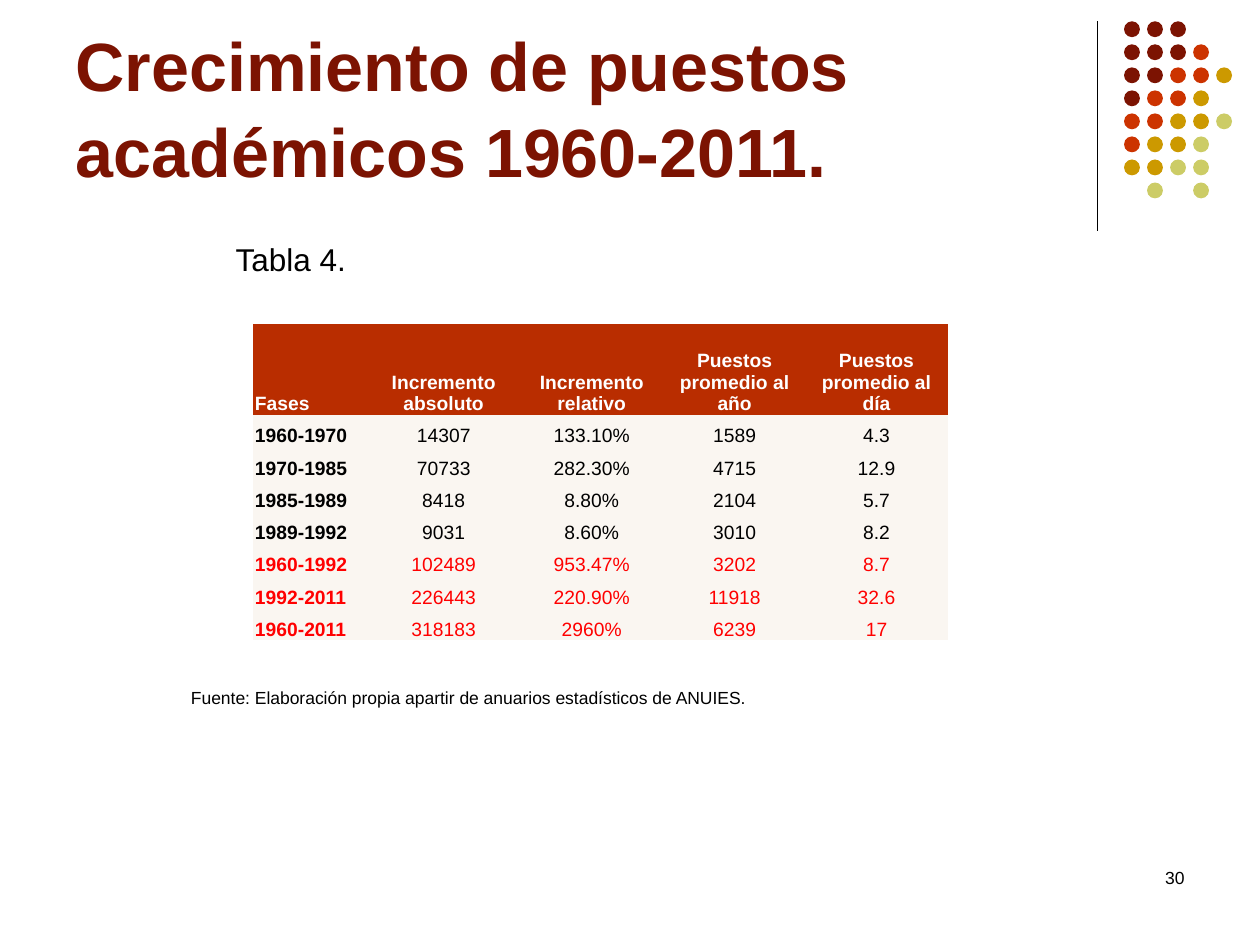
from dataclasses import dataclass
from lxml import etree
from pptx import Presentation
from pptx.dml.color import RGBColor
from pptx.enum.shapes import MSO_CONNECTOR, MSO_SHAPE
from pptx.enum.text import MSO_ANCHOR, MSO_AUTO_SIZE, PP_ALIGN
from pptx.oxml.ns import qn
from pptx.util import Cm, Pt

LEFT, CENTER, RIGHT = PP_ALIGN.LEFT, PP_ALIGN.CENTER, PP_ALIGN.RIGHT
TOP, BOTTOM = MSO_ANCHOR.TOP, MSO_ANCHOR.BOTTOM
OVAL, STRAIGHT = MSO_SHAPE.OVAL, MSO_CONNECTOR.STRAIGHT
NO_AUTOFIT = MSO_AUTO_SIZE.NONE
PLAIN_TABLE = "{2D5ABB26-0587-4C30-8999-92F81FD0307C}"


@dataclass(frozen=True)
class Theme:
    font: str = "Arial"
    maroon: str = "7C1302"
    red: str = "CC3300"
    gold: str = "CC9900"
    olive: str = "CCCC66"
    header: str = "B92D00"
    body: str = "FAF6F1"
    highlight: str = "FF0000"
    black: str = "000000"
    white: str = "FFFFFF"
    title_size: int = 39
    caption_size: int = 18
    table_size: int = 11
    small_size: int = 10


THEME = Theme()

TITLE = "Crecimiento de puestos académicos 1960-2011."
HEADERS = ["Fases", "Incremento absoluto", "Incremento relativo",
           "Puestos promedio al año", "Puestos promedio al día"]
PHASES = [
    ("1960-1970", "14307", "133.10%", "1589", "4.3"),
    ("1970-1985", "70733", "282.30%", "4715", "12.9"),
    ("1985-1989", "8418", "8.80%", "2104", "5.7"),
    ("1989-1992", "9031", "8.60%", "3010", "8.2"),
]
TOTALS = [
    ("1960-1992", "102489", "953.47%", "3202", "8.7"),
    ("1992-2011", "226443", "220.90%", "11918", "32.6"),
    ("1960-2011", "318183", "2960%", "6239", "17"),
]
LABELS = [
    ("Tabla 4.", (4.5, 4.72, 12.19, 1.02), THEME.caption_size, LEFT),
    ("Fuente: Elaboración propia apartir de anuarios estadísticos de ANUIES.",
     (3.6, 13.72, 14, 0.69), THEME.small_size, LEFT),
    ("30", (18.21, 17.35, 5.92, 1.27), THEME.small_size, RIGHT),
]
DOTS = ["MMM", "MMMR", "MMRRG", "MRRG", "RRGGO", "RGGO", "GGOO", " O O"]
DOT_COLORS = {"M": THEME.maroon, "R": THEME.red, "G": THEME.gold, "O": THEME.olive}

COLUMN_WIDTHS = [2.31, 3.05, 2.92, 2.84, 2.88]
HEADER_HEIGHT, ROW_HEIGHT = 1.83, 0.65
TABLE_LEFT, TABLE_TOP = 5.11, 6.53
CELL_INSET = 0.03
DOT_LEFT, DOT_TOP, DOT_SIZE = 22.66, 0.43, 0.32
DOT_PITCH = 3.25 / (len(DOTS) - 1)


def rgb(value):
    return RGBColor.from_string(value)


def write(tf, text, size, color=THEME.black, bold=False, align=LEFT, spacing=None):
    p = tf.paragraphs[0]
    p.alignment = align
    p.line_spacing = spacing
    r = p.add_run()
    r.text = text
    r.font.name = THEME.font
    r.font.size = Pt(size)
    r.font.bold = bold
    r.font.color.rgb = rgb(color)


def add_dots(s):
    for row, pattern in enumerate(DOTS):
        for col, key in enumerate(pattern):
            if key == " ":
                continue
            dot = s.shapes.add_shape(
                OVAL, Cm(DOT_LEFT + col * DOT_PITCH), Cm(DOT_TOP + row * DOT_PITCH),
                Cm(DOT_SIZE), Cm(DOT_SIZE))
            dot.shadow.inherit = False
            dot.fill.solid()
            dot.fill.fore_color.rgb = rgb(DOT_COLORS[key])
            dot.line.fill.background()


def add_rule(s):
    rule = s.shapes.add_connector(STRAIGHT, Cm(22.12), Cm(0.43), Cm(22.12), Cm(4.65))
    rule.line.color.rgb = rgb(THEME.black)
    rule.line.width = Pt(0.75)
    etree.SubElement(rule._element.spPr, qn("a:effectLst"))


def set_title(s):
    sp = s.shapes.title
    sp.left, sp.top, sp.width, sp.height = Cm(1.27), Cm(0.33), Cm(20.96), Cm(3.61)
    tf = sp.text_frame
    tf.word_wrap = True
    tf.auto_size = NO_AUTOFIT
    tf.vertical_anchor = BOTTOM
    tf.margin_bottom = Cm(0.08)
    write(tf, TITLE, THEME.title_size, color=THEME.maroon, bold=True, spacing=1.05)


def add_phase_table(s):
    rows = [HEADERS] + PHASES + TOTALS
    heights = [HEADER_HEIGHT] + [ROW_HEIGHT] * (len(rows) - 1)
    frame = s.shapes.add_table(
        len(rows), len(HEADERS), Cm(TABLE_LEFT), Cm(TABLE_TOP),
        Cm(sum(COLUMN_WIDTHS)), Cm(sum(heights)))
    table = frame.table
    table.horz_banding = False
    table._tbl.tblPr.find(qn("a:tableStyleId")).text = PLAIN_TABLE
    for column, width in zip(table.columns, COLUMN_WIDTHS):
        column.width = Cm(width)
    for i, (values, height) in enumerate(zip(rows, heights)):
        table.rows[i].height = Cm(height)
        is_header = i == 0
        if is_header:
            color = THEME.white
        else:
            color = THEME.highlight if values in TOTALS else THEME.black
        for j, text in enumerate(values):
            cell = table.cell(i, j)
            cell.fill.solid()
            cell.fill.fore_color.rgb = rgb(THEME.header if is_header else THEME.body)
            cell.vertical_anchor = BOTTOM
            cell.margin_left = cell.margin_right = cell.margin_top = Cm(CELL_INSET)
            cell.margin_bottom = 0
            write(cell.text_frame, text, THEME.table_size, color=color,
                  bold=is_header or j == 0, align=CENTER if j else LEFT)


def add_labels(s):
    for text, box, size, align in LABELS:
        tf = s.shapes.add_textbox(*map(Cm, box)).text_frame
        tf.word_wrap = True
        tf.vertical_anchor = TOP
        write(tf, text, size, align=align)


def main():
    prs = Presentation()
    prs.slide_width, prs.slide_height = Cm(25.4), Cm(19.05)
    s = prs.slides.add_slide(prs.slide_layouts[5])
    add_rule(s)
    add_dots(s)
    set_title(s)
    add_phase_table(s)
    add_labels(s)
    prs.save("out.pptx")


if __name__ == "__main__":
    main()
